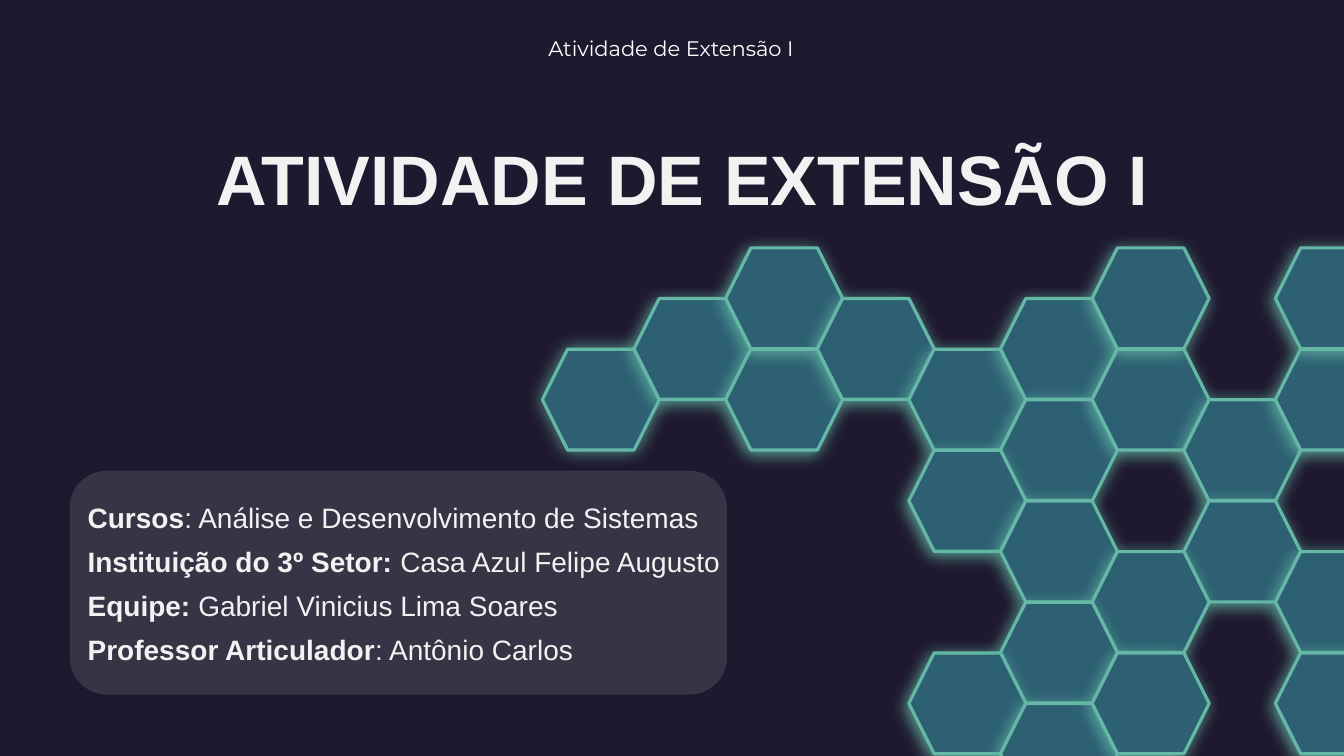
import collections
import pptx
import pptx.util
import pptx.dml.color
import pptx.enum.shapes
import pptx.enum.text
import pptx.oxml
import pptx.oxml.ns

HEAD = [[("Atividade de Extensão I", False)]]
TITLE = [[("ATIVIDADE DE EXTENSÃO I", True)]]
FACTS = [
    [("Cursos", True), (": Análise e Desenvolvimento de Sistemas", False)],
    [("Instituição do 3º Setor:", True), (" Casa Azul Felipe Augusto", False)],
    [("Equipe: ", True), ("Gabriel Vinicius Lima Soares", False)],
    [("Professor Articulador", True), (": Antônio Carlos", False)],
]
CELLS = [
    (0, 2), (1, 1), (2, 2), (2, 0), (3, 1), (4, 2), (5, 1), (5, 3),
    (6, 2), (6, 0), (4, 4), (5, 5), (7, 3), (7, 5), (6, 6), (5, 7),
    (4, 8), (5, 9), (6, 8), (8, 6), (8, 8), (8, 2), (8, 0),
]

Theme = collections.namedtuple(
    "Theme", "back panel cell edge white pale sans head small body large")
THEME = Theme(back="1F192F", panel="D0CECE", cell="2D6073", edge="65B8A6",
              white="FFFFFF", pale="F2F2F2", sans="Arial", head="Montserrat",
              small=15, body=20, large=50)
Glow = collections.namedtuple("Glow", "alpha blur dist angle")
FIRST = Glow(84, 13, 0, 0)
REST = Glow(87, 12, 3, 128)

WIDE, HIGH = 13.33, 7.5
LEFT, TOP = 5.38, 2.46
COL = (12.65 - LEFT) / 8
ROW = (6.98 - TOP) / 9

Inches = pptx.util.Inches
Pt = pptx.util.Pt
Shape = pptx.enum.shapes.MSO_SHAPE
Align = pptx.enum.text.PP_ALIGN
Anchor = pptx.enum.text.MSO_ANCHOR


def tint(code):
    return pptx.dml.color.RGBColor.from_string(code)


def child(node, tag, **attrs):
    item = pptx.oxml.parse_xml(f"<a:{tag} {pptx.oxml.ns.nsdecls('a')}/>")
    for key, value in attrs.items():
        item.set(key, str(value))
    node.append(item)
    return item


def write(slide, text, box, size, color, font=THEME.sans, align=Align.LEFT,
          anchor=Anchor.TOP, line=1.0, gap=0):
    frame = slide.shapes.add_textbox(*map(Inches, box)).text_frame
    frame.word_wrap = True
    frame.vertical_anchor = anchor
    for index, parts in enumerate(text):
        para = frame.paragraphs[0] if index == 0 else frame.add_paragraph()
        para.alignment = align
        para.line_spacing = line
        if index:
            para.space_before = Pt(gap)
        for words, bold in parts:
            run = para.add_run()
            run.text = words
            run.font.name = font
            run.font.size = Pt(size)
            run.font.bold = bold
            run.font.color.rgb = tint(color)


def draw(slide, kind, box, fill):
    shape = slide.shapes.add_shape(kind, *map(Inches, box))
    shape.shadow.inherit = False
    shape.fill.solid()
    shape.fill.fore_color.rgb = tint(fill)
    shape.line.fill.background()
    return shape


def panel(slide, box):
    shape = draw(slide, Shape.ROUNDED_RECTANGLE, box, THEME.panel)
    color = shape._element.spPr.find(".//" + pptx.oxml.ns.qn("a:srgbClr"))
    child(color, "alpha", val=15000)


def cell(slide, col, row, glow):
    box = (LEFT + col * COL, TOP + row * ROW, 1.16, 1)
    shape = draw(slide, Shape.HEXAGON, box, THEME.cell)
    shape.line.color.rgb = tint(THEME.edge)
    shape.line.width = Pt(2.25)
    effects = shape._element.spPr.find(pptx.oxml.ns.qn("a:effectLst"))
    shade = child(effects, "outerShdw", blurRad=Pt(glow.blur),
                  dist=Pt(glow.dist), dir=glow.angle * 60000,
                  algn="ctr", rotWithShape=0)
    color = child(shade, "srgbClr", val=THEME.edge)
    child(color, "alpha", val=glow.alpha * 1000)


def main():
    deck = pptx.Presentation()
    deck.slide_width, deck.slide_height = Inches(WIDE), Inches(HIGH)
    slide = deck.slides.add_slide(deck.slide_layouts[6])
    slide.background.fill.solid()
    slide.background.fill.fore_color.rgb = tint(THEME.back)

    write(slide, HEAD, (3.12, 0.3, 7.07, 0.35), THEME.small, THEME.white,
          font=THEME.head, align=Align.CENTER)
    panel(slide, (0.69, 4.67, 6.52, 2.22))
    write(slide, FACTS, (0.77, 4.95, 6.78, 1.8), THEME.body, THEME.pale,
          line=0.9, gap=10)
    for index, (col, row) in enumerate(CELLS):
        cell(slide, col, row, REST if index else FIRST)
    write(slide, TITLE, (1.54, 1.29, 10.46, 0.95), THEME.large, THEME.pale,
          align=Align.CENTER, anchor=Anchor.BOTTOM, line=0.9)
    deck.save("out.pptx")


if __name__ == "__main__":
    main()
